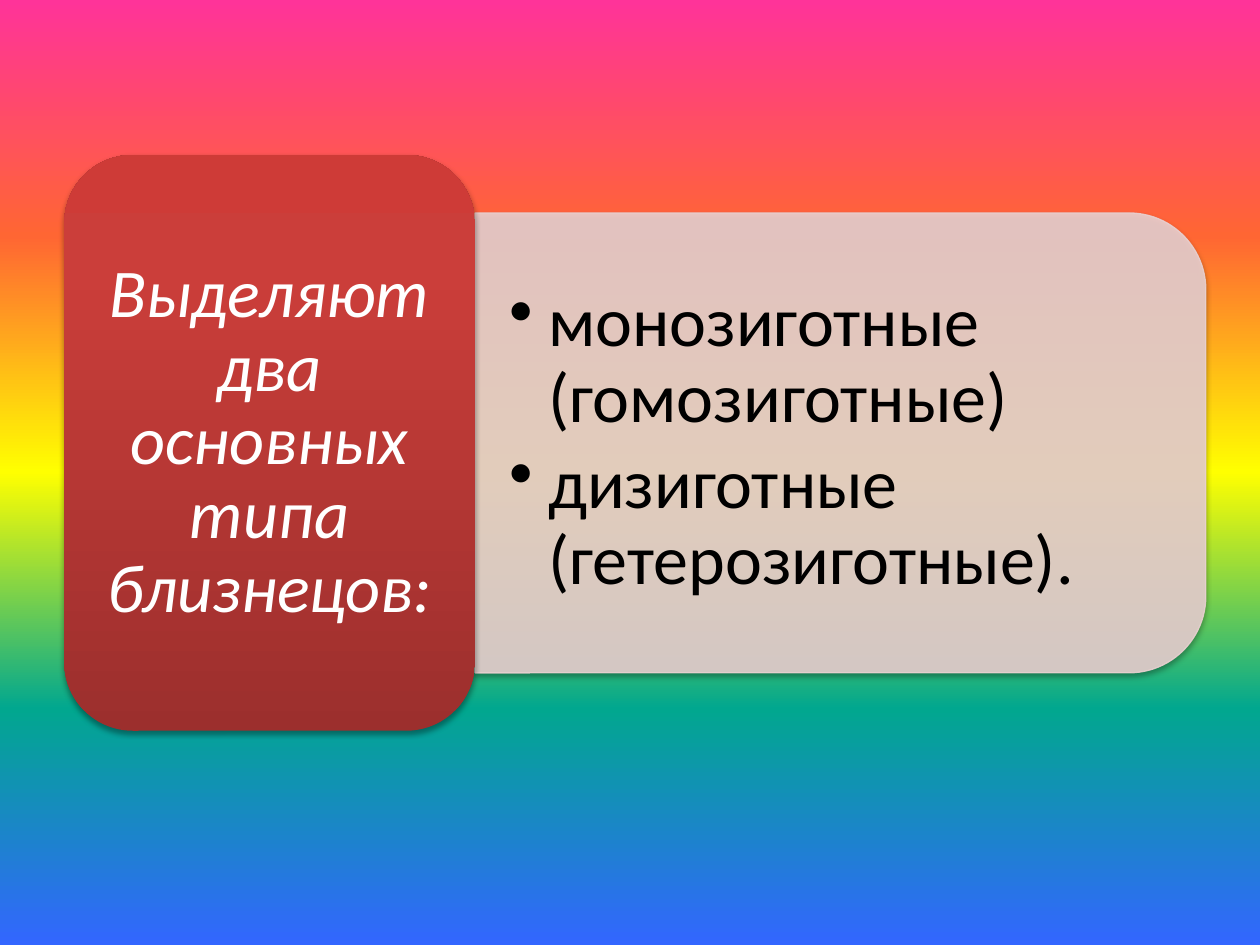
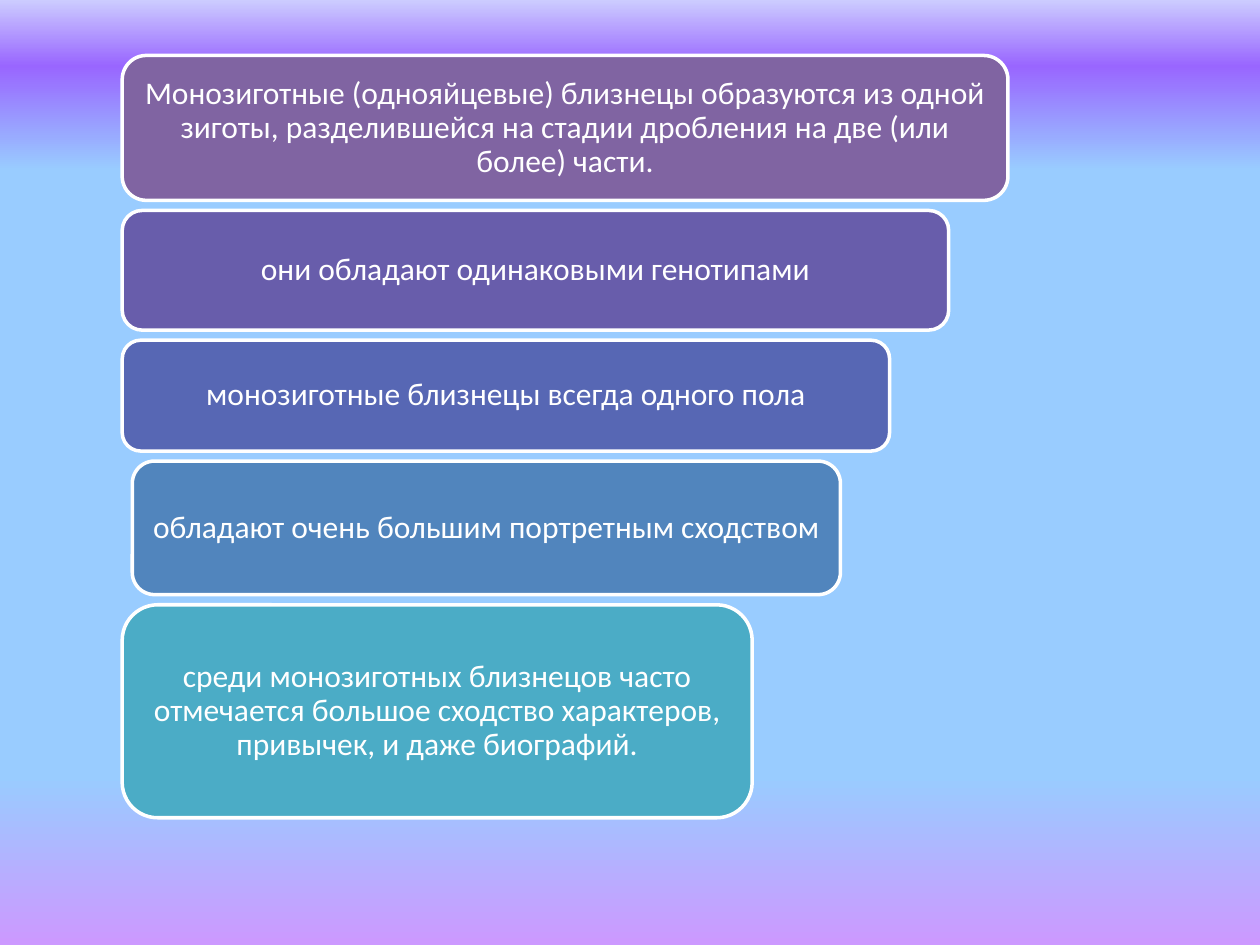
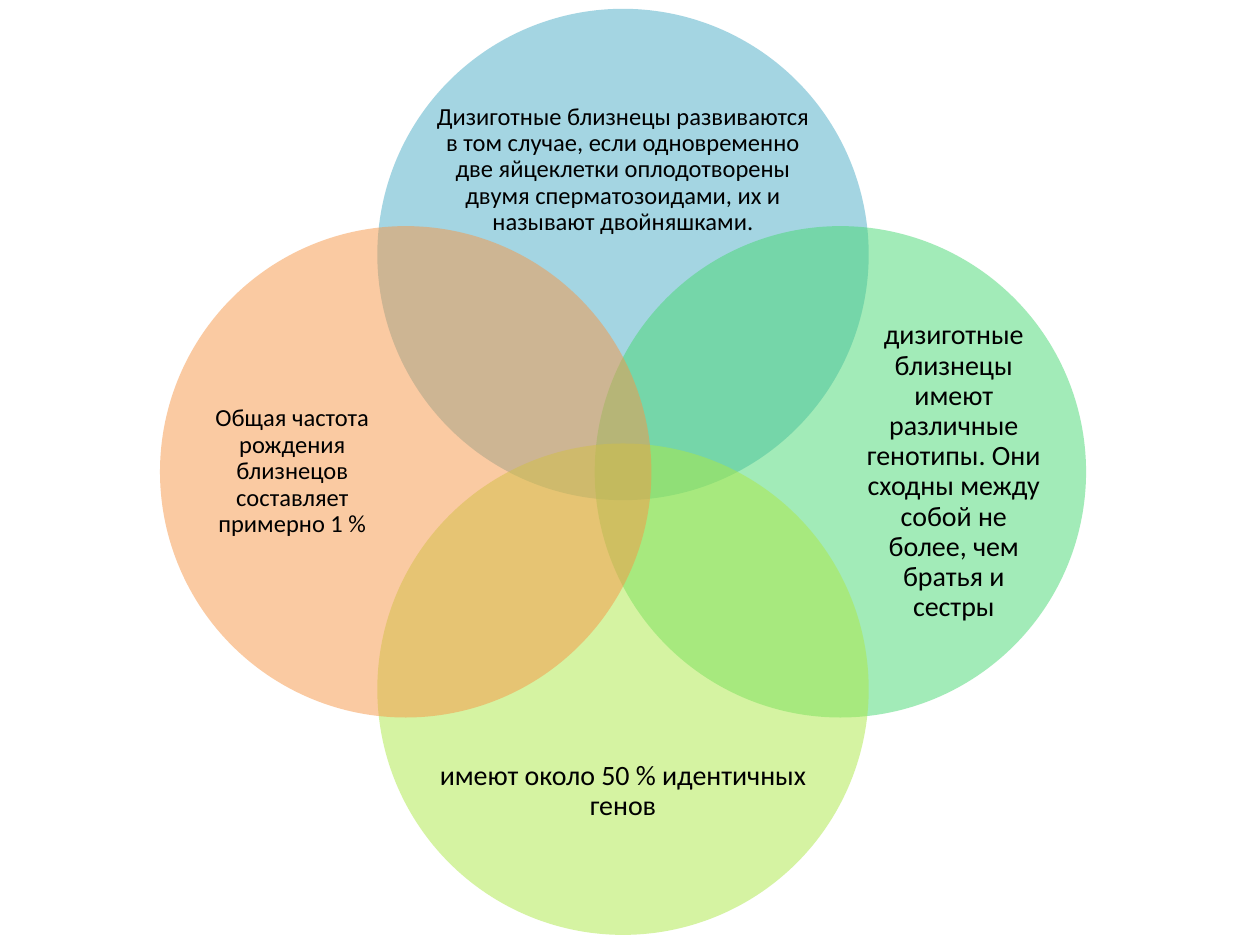
from lxml import etree
from pptx import Presentation
from pptx.dml.color import RGBColor
from pptx.enum import shapes, text
from pptx.oxml.ns import qn
from pptx.util import Inches, Pt

FONT = "Calibri"
WHITE, BLACK = "FFFFFF", "000000"
RAINBOW = [(0, "FF3399"), (25, "FF6633"), (50, "FFFF00"), (75, "01A78F"), (100, "3366FF")]
SKY = [(0, "CCCCFF"), (7, "9966FF"), (18, "99CCFF"), (82, "99CCFF"), (100, "CC99FF")]
RED = [(0, "9C2F2D"), (80, "CB3E3A"), (100, "CE3B37")]
DOWN, UP = 270, 90


def rgb(value):
    return RGBColor.from_string(value)


def add_node(parent, tag, **attrs):
    return etree.SubElement(parent, qn(tag), {k: str(v) for k, v in attrs.items()})


def gradient(owner, fill, stops, angle):
    fill.gradient()
    fill.gradient_angle = angle
    stop_list = owner.element.find(".//" + qn("a:gsLst"))
    for stop in list(stop_list):
        stop_list.remove(stop)
    for position, color in stops:
        stop = add_node(stop_list, "a:gs", pos=position * 1000)
        add_node(stop, "a:srgbClr", val=color)


def set_alpha(sp, percent):
    for color in sp.element.spPr.iter(qn("a:srgbClr")):
        add_node(color, "a:alpha", val=percent * 1000)


def drop_shadow(sp):
    effects = sp.element.spPr.find(qn("a:effectLst"))
    shadow = add_node(effects, "a:outerShdw", blurRad=Pt(3.1), dist=Pt(1.8),
                      dir=5400000, rotWithShape=0)
    color = add_node(shadow, "a:srgbClr", val=BLACK)
    add_node(color, "a:alpha", val=35000)


def add_shape(s, kind, box, fill=None, line=None, width=0):
    sp = s.shapes.add_shape(kind, *map(Inches, box))
    sp.shadow.inherit = False
    if fill:
        sp.fill.solid()
        sp.fill.fore_color.rgb = rgb(fill)
    if line:
        sp.line.color.rgb = rgb(line)
        sp.line.width = Pt(width)
    else:
        sp.line.fill.background()
    return sp


def write(sp, lines, size, color, insets=(0, 0), italic=None, bullets=False):
    tf = sp.text_frame
    tf.word_wrap = True
    tf.vertical_anchor = text.MSO_ANCHOR.MIDDLE
    tf.margin_left = tf.margin_right = Inches(insets[0])
    tf.margin_top = tf.margin_bottom = Inches(insets[1])
    for i, line in enumerate(lines):
        p = tf.add_paragraph() if i else tf.paragraphs[0]
        p.text = line
        p.line_spacing = 0.9
        p.alignment = text.PP_ALIGN.LEFT if bullets else text.PP_ALIGN.CENTER
        if bullets:
            p.space_after = Pt(6)
            props = p._p.get_or_add_pPr()
            props.set("marL", str(Inches(0.31)))
            props.set("indent", str(-Inches(0.31)))
            add_node(props, "a:buChar", char="•")
        p.font.name = FONT
        p.font.size = Pt(size)
        p.font.italic = italic
        p.font.color.rgb = rgb(color)


def add_text(s, box, lines, size, color, **options):
    sp = s.shapes.add_textbox(*map(Inches, box))
    write(sp, lines, size, color, **options)


def types_panel(s, box, heading, items):
    left, top, width, height = box
    head_width, body_height = 3.26, 3.65
    body_width = width - head_width
    body_left = left + head_width
    middle = top + height / 2
    turned = (body_left + (body_width - body_height) / 2, middle - body_width / 2,
              body_height, body_width)
    body = add_shape(s, shapes.MSO_SHAPE.ROUND_2_SAME_RECTANGLE, turned,
                     "E8D0D0", "E8D0D0", 0.75)
    body.rotation = 90
    set_alpha(body, 90)
    drop_shadow(body)
    add_text(s, (body_left, middle - 1.65, body_width - 0.18, 3.3), items, 40, BLACK,
             insets=(0.27, 0.14), bullets=True)
    head = add_shape(s, shapes.MSO_SHAPE.ROUNDED_RECTANGLE, (left, top, head_width, height))
    gradient(head, head.fill, RED, UP)
    drop_shadow(head)
    write(head, [heading], 39, WHITE, insets=(0.16, 0.08), italic=True)


def steps(s, left, top, gap, rows):
    for indent, width, height, color, line in rows:
        bar = add_shape(s, shapes.MSO_SHAPE.ROUNDED_RECTANGLE,
                        (left + indent, top, width, height), color, WHITE, 2)
        write(bar, [line], 18, WHITE, insets=(0.07, 0.04))
        top += height + gap


def venn(s, left, top, side, diameter, petals):
    step = (side - diameter) / 2
    for column, row, color, (dx, dy, width, height), size, line in petals:
        x, y = left + column * step, top + row * step
        circle = add_shape(s, shapes.MSO_SHAPE.OVAL, (x, y, diameter, diameter), color)
        set_alpha(circle, 50)
        add_text(s, (x + dx, y + dy, width, height), [line], size, BLACK)


def main():
    prs = Presentation()
    prs.slide_width, prs.slide_height = Inches(10), Inches(7.5)
    types, identical, fraternal = [prs.slides.add_slide(prs.slide_layouts[6]) for _ in range(3)]

    gradient(types, types.background.fill, RAINBOW, DOWN)
    types_panel(types, (0.51, 1.23, 9.06, 4.57), "Выделяют два основных типа близнецов:",
                ["монозиготные (гомозиготные)", "дизиготные (гетерозиготные)."])

    gradient(identical, identical.background.fill, SKY, DOWN)
    steps(identical, 0.97, 0.44, 0.08, [
        (0, 7.03, 1.15, "8064A2",
         "Монозиготные (однояйцевые) близнецы образуются из одной зиготы, "
         "разделившейся на стадии дробления на две (или более) части."),
        (0, 6.56, 0.95, "685DAB", "они обладают одинаковыми генотипами"),
        (0, 6.09, 0.88, "5767B4", "монозиготные близнецы всегда одного пола"),
        (0.08, 5.62, 1.06, "5185BD", "обладают очень большим портретным сходством"),
        (0, 5, 1.69, "4BACC6",
         "среди монозиготных близнецов часто отмечается большое сходство "
         "характеров, привычек, и даже биографий."),
    ])

    fraternal.background.fill.solid()
    fraternal.background.fill.fore_color.rgb = rgb(WHITE)
    venn(fraternal, 1.27, 0.07, 7.35, 3.9, [
        (1, 0, "4BACC6", (0.45, 0.66, 3, 1.24), 14,
         "Дизиготные близнецы развиваются в том случае, если одновременно две "
         "яйцеклетки оплодотворены двумя сперматозоидами, их и называют двойняшками."),
        (2, 1, "47D872", (2.1, 0.45, 1.5, 3), 16,
         "дизиготные близнецы имеют различные генотипы. Они сходны между собой "
         "не более, чем братья и сестры"),
        (1, 2, "ACE946", (0.45, 2.14, 3, 1.24), 16, "имеют около 50 % идентичных генов"),
        (0, 1, "F79646", (0.3, 0.45, 1.5, 3), 14,
         "Общая частота рождения близнецов составляет примерно 1 %"),
    ])

    prs.save("out.pptx")


if __name__ == "__main__":
    main()
